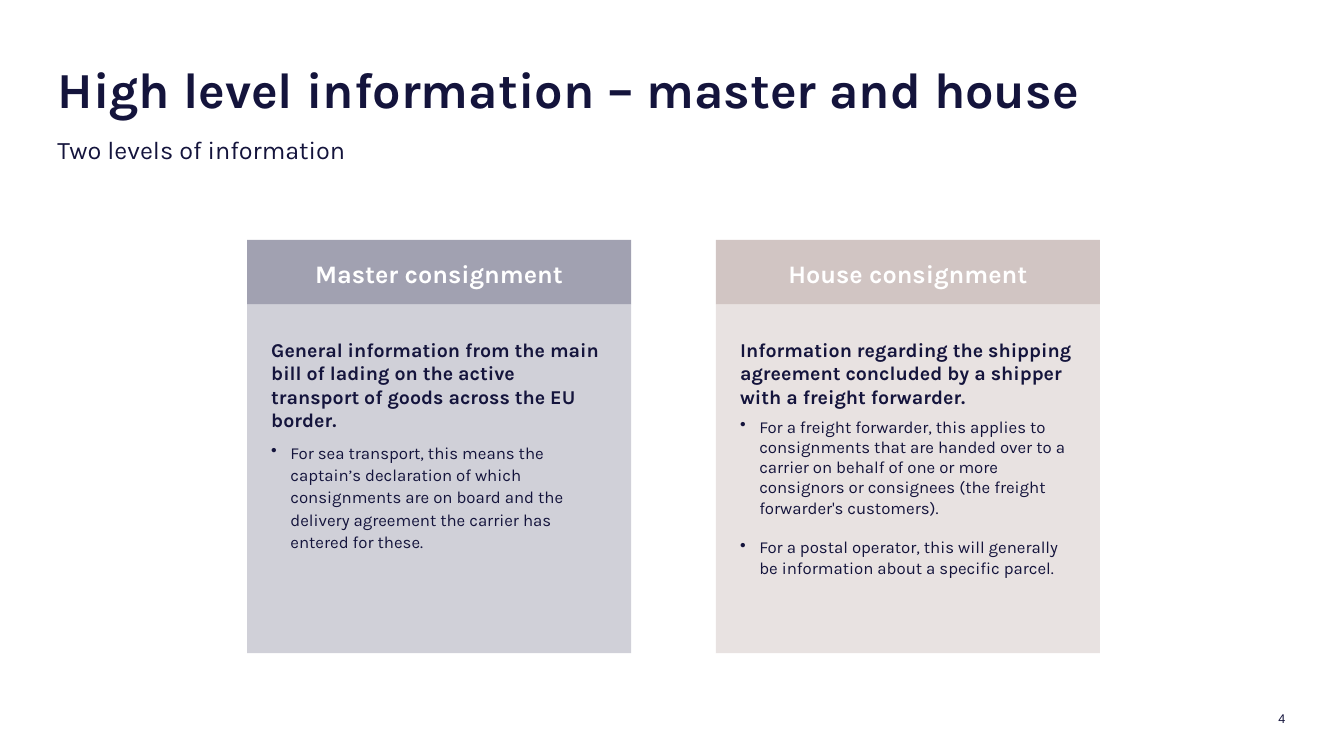
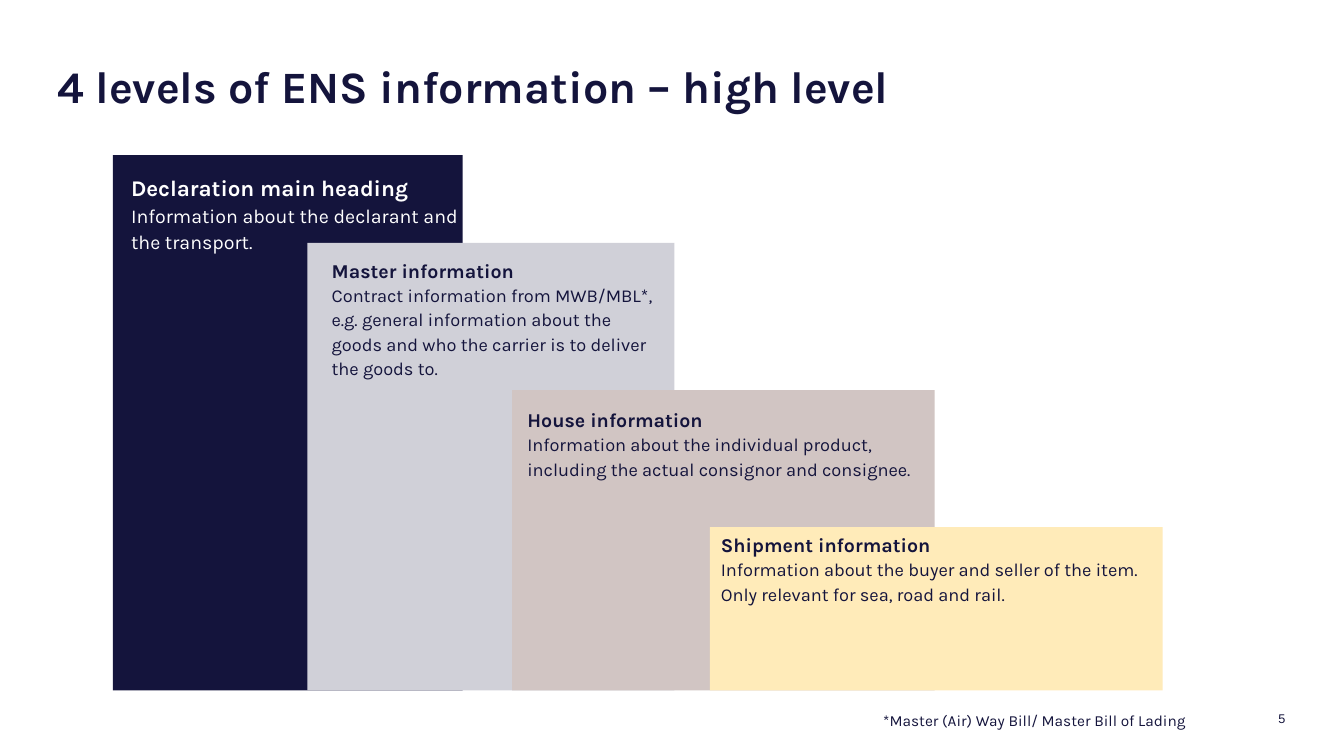
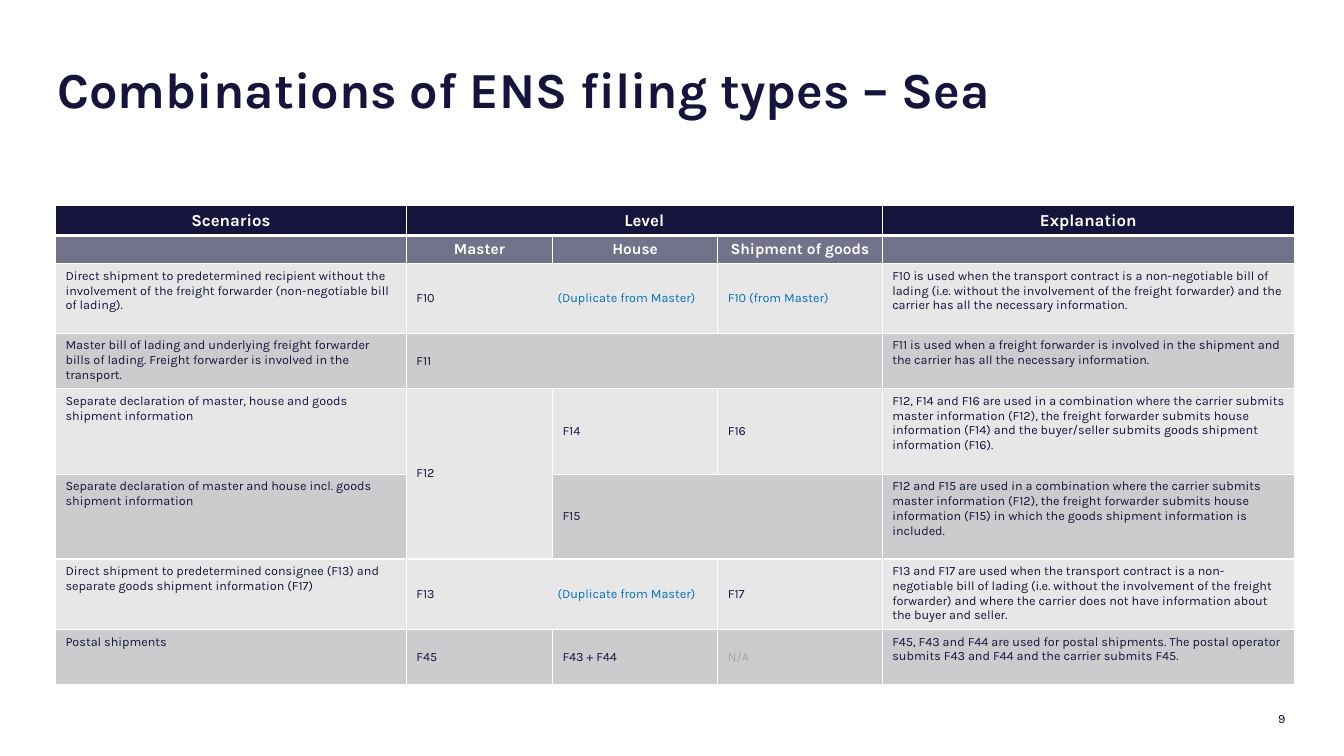
"""Builds three slides about levels and filing types of ENS information."""
from lxml import etree
from pptx import Presentation
from pptx.dml.color import RGBColor
from pptx.enum.shapes import MSO_SHAPE
from pptx.enum.text import MSO_ANCHOR, MSO_AUTO_SIZE, PP_ALIGN
from pptx.oxml.ns import qn
from pptx.util import Inches, Pt

RECTANGLE = MSO_SHAPE.RECTANGLE
TOP, MIDDLE, BOTTOM = MSO_ANCHOR.TOP, MSO_ANCHOR.MIDDLE, MSO_ANCHOR.BOTTOM
LEFT, CENTER, RIGHT = PP_ALIGN.LEFT, PP_ALIGN.CENTER, PP_ALIGN.RIGHT
NO_AUTO_SIZE = MSO_AUTO_SIZE.NONE

NAVY = RGBColor(0x14, 0x14, 0x3C)
WHITE = RGBColor(0xFF, 0xFF, 0xFF)
SLATE = RGBColor(0x72, 0x72, 0x8A)
LAVENDER = RGBColor(0xA1, 0xA1, 0xB1)
PALE_LAVENDER = RGBColor(0xD0, 0xD0, 0xD8)
ROSE = RGBColor(0xD1, 0xC5, 0xC3)
PALE_ROSE = RGBColor(0xE8, 0xE2, 0xE1)
YELLOW = RGBColor(0xFF, 0xEB, 0xB9)
LIGHT_GREY = RGBColor(0xE7, 0xE7, 0xE8)
MID_GREY = RGBColor(0xCC, 0xCC, 0xCE)
FADED = RGBColor(0xA6, 0xA6, 0xA6)
BLUE = RGBColor(0x00, 0x70, 0xC0)

FONT = "Karla"
NUMBER_FONT = "Arial"
LOOSE = 1.11
TITLE_ONLY, TITLE_AND_BODY = 5, 1

CONSIGNMENTS = [
    {
        "left": 2.45, "band": LAVENDER, "panel": PALE_LAVENDER,
        "heading": "Master consignment",
        "lead": "General information from the main bill of lading on the active transport "
                "of goods across the EU border.",
        "spacing": LOOSE,
        "bullets": [
            "For sea transport, this means the captain’s declaration of which consignments are "
            "on board and the delivery agreement the carrier has entered for these.",
        ],
    },
    {
        "left": 7.1, "band": ROSE, "panel": PALE_ROSE,
        "heading": "House consignment",
        "lead": "Information regarding the shipping agreement concluded by a shipper with a "
                "freight forwarder.",
        "spacing": 1.0,
        "bullets": [
            "For a freight forwarder, this applies to consignments that are handed over to a "
            "carrier on behalf of one or more consignors or consignees (the freight "
            "forwarder's customers).",
            "For a postal operator, this will generally be information about a specific parcel.",
        ],
    },
]

LEVELS_BOTTOM = 6.85
LEVELS = [
    {"left": 1.12, "top": 1.54, "width": 3.47, "insets": (0.18, 0.16, 0.04, 0),
     "fill": NAVY, "color": WHITE, "sizes": (16, 14), "heading": "Declaration main heading",
     "lines": ["Information about the declarant and the transport."]},
    {"left": 3.05, "top": 2.41, "width": 3.64, "insets": (0.24, 0.13, 0.15, 0),
     "fill": PALE_LAVENDER, "color": NAVY, "sizes": (14, 13), "heading": "Master information",
     "lines": ["Contract information from MWB/MBL*, e.g. general information about the goods "
               "and who the carrier is to deliver the goods to."]},
    {"left": 5.08, "top": 3.87, "width": 4.19, "insets": (0.15, 0.15, 0.05, 0),
     "fill": ROSE, "color": NAVY, "sizes": (14, 13), "heading": "House information",
     "lines": ["Information about the individual product, including the actual consignor and "
               "consignee."]},
    {"left": 7.04, "top": 5.23, "width": 4.49, "insets": (0.11, 0.03, 0.15, 0),
     "fill": YELLOW, "color": NAVY, "sizes": (14, 13), "heading": "Shipment information",
     "lines": ["Information about the buyer and seller of the item.",
               "Only relevant for sea, road and rail."]},
]
FOOTNOTE = "*Master (Air) Way Bill/ Master Bill of Lading"

DUPLICATE = "(Duplicate from Master)"
FROM_MASTER = "F10 (from Master)"
NOT_APPLICABLE = "N/A"
TEXT_COLORS = {DUPLICATE: BLUE, FROM_MASTER: BLUE, NOT_APPLICABLE: FADED}
COLUMN_WIDTHS = [3.48, 1.45, 1.64, 1.63, 4.09]
ROW_HEIGHTS = [0.28, 0.28, 0.69, 0.55, 0.85, 0.84, 0.7, 0.55]
MERGES = [((0, 1), (0, 3)), ((2, 1), (2, 2)), ((3, 1), (3, 3)),
          ((4, 1), (5, 1)), ((5, 2), (5, 3)), ((6, 1), (6, 2))]
FILINGS = [
    ["Scenarios", "Level", "", "", "Explanation"],
    ["", "Master", "House", "Shipment of goods", ""],
    ["Direct shipment to predetermined recipient without the involvement of the freight "
     "forwarder (non-negotiable bill of lading).",
     ("F10", DUPLICATE), "", FROM_MASTER,
     "F10 is used when the transport contract is a non-negotiable bill of lading (i.e. without "
     "the involvement of the freight forwarder) and the carrier has all the necessary "
     "information."],
    ["Master bill of lading and underlying freight forwarder bills of lading. Freight forwarder "
     "is involved in the transport.",
     "F11", "", "",
     "F11 is used when a freight forwarder is involved in the shipment and the carrier has all "
     "the necessary information."],
    ["Separate declaration of master, house and goods shipment information",
     "F12", "F14", "F16",
     "F12, F14 and F16 are used in a combination where the carrier submits master information "
     "(F12), the freight forwarder submits house information (F14) and the buyer/seller "
     "submits goods shipment information (F16)."],
    ["Separate declaration of master and house incl. goods shipment information",
     "", "F15", "",
     "F12 and F15 are used in a combination where the carrier submits master information "
     "(F12), the freight forwarder submits house information (F15) in which the goods "
     "shipment information is included."],
    ["Direct shipment to predetermined consignee (F13) and separate goods shipment information "
     "(F17)",
     ("F13", DUPLICATE), "", "F17",
     "F13 and F17 are used when the transport contract is a non-negotiable bill of lading (i.e. "
     "without the involvement of the freight forwarder) and where the carrier does not have "
     "information about the buyer and seller."],
    ["Postal shipments", "F45", "F43 + F44", NOT_APPLICABLE,
     "F45, F43 and F44 are used for postal shipments. The postal operator submits F43 and F44 "
     "and the carrier submits F45."],
]


def add_run(paragraph, text, size, color=NAVY, bold=False, font=FONT):
    run = paragraph.add_run()
    run.text = text
    run.font.name = font
    run.font.size = Pt(size)
    run.font.bold = bold
    run.font.color.rgb = color


def write(frame, text, size, color=NAVY, bold=False, font=FONT,
          align=LEFT, spacing=1.0, after=0):
    """Write into the empty first paragraph, or else into a new one."""
    first = frame.paragraphs[0]
    paragraph = frame.add_paragraph() if first.runs else first
    paragraph.alignment = align
    paragraph.line_spacing = spacing
    paragraph.space_before = Pt(0)
    paragraph.space_after = Pt(after)
    add_run(paragraph, text, size, color, bold, font)
    return paragraph


def set_frame(shape, insets=(0, 0, 0, 0), anchor=TOP):
    frame = shape.text_frame
    frame.word_wrap = True
    frame.auto_size = NO_AUTO_SIZE
    frame.vertical_anchor = anchor
    (frame.margin_left, frame.margin_top,
     frame.margin_right, frame.margin_bottom) = map(Inches, insets)
    return frame


def place(shape, left, top, width, height):
    shape.left, shape.top = Inches(left), Inches(top)
    shape.width, shape.height = Inches(width), Inches(height)


def add_textbox(slide, box, **frame_options):
    return set_frame(slide.shapes.add_textbox(*map(Inches, box)), **frame_options)


def add_rectangle(slide, box, fill, **frame_options):
    shape = slide.shapes.add_shape(RECTANGLE, *map(Inches, box))
    shape.shadow.inherit = False
    shape.fill.solid()
    shape.fill.fore_color.rgb = fill
    shape.line.fill.background()
    return set_frame(shape, **frame_options)


def set_bullet(paragraph, character=None):
    properties = paragraph._p.get_or_add_pPr()
    if character:
        properties.set("marL", str(Inches(0.19)))
        properties.set("indent", str(-Inches(0.19)))
        etree.SubElement(properties, qn("a:buChar"), char=character)
    else:
        properties.set("marL", "0")
        properties.set("indent", "0")
        etree.SubElement(properties, qn("a:buNone"))


def start_slide(presentation, layout, title, number, title_size=36, number_font=NUMBER_FONT):
    slide = presentation.slides.add_slide(presentation.slide_layouts[layout])
    place(slide.shapes.title, 0.57, 0.65, 12.2, 0.57)
    write(set_frame(slide.shapes.title), title, title_size, bold=True, spacing=0.89)
    number_frame = add_textbox(slide, (11.05, 7.02, 1.7, 0.18), anchor=BOTTOM)
    write(number_frame, number, 9, font=number_font, align=RIGHT)
    return slide


def build_consignments(presentation):
    slide = start_slide(presentation, TITLE_AND_BODY,
                        "High level information – master and house", "4")
    body = slide.placeholders[1]
    place(body, 0.57, 1.3, 12.2, 0.41)
    set_bullet(write(set_frame(body), "Two levels of information", 18, spacing=LOOSE))
    width, band_top, panel_top = 3.81, 2.38, 3.02
    for item in CONSIGNMENTS:
        left = item["left"]
        panel = add_rectangle(slide, (left, panel_top, width, 3.46), item["panel"],
                              insets=(0.24, 0.33, 0.24, 0.12))
        write(panel, item["lead"], 14, bold=True, after=6)
        for bullet in item["bullets"]:
            set_bullet(write(panel, bullet, 12, spacing=item["spacing"], after=14), "•")
        band = add_rectangle(slide, (left, band_top, width, panel_top - band_top),
                             item["band"], anchor=MIDDLE)
        write(band, item["heading"], 18, WHITE, True, align=CENTER, spacing=LOOSE)


def build_levels(presentation):
    slide = start_slide(presentation, TITLE_ONLY,
                        "4 levels of ENS information – high level", "5", title_size=32)
    for level in LEVELS:
        box = (level["left"], level["top"], level["width"], LEVELS_BOTTOM - level["top"])
        frame = add_rectangle(slide, box, level["fill"], insets=level["insets"])
        heading_size, line_size = level["sizes"]
        write(frame, level["heading"], heading_size, level["color"], True, spacing=LOOSE)
        for line in level["lines"]:
            write(frame, line, line_size, level["color"], spacing=LOOSE)
    write(add_textbox(slide, (8.76, 7.03, 3.22, 0.19)), FOOTNOTE, 11, spacing=LOOSE)


def set_borders(cell, row):
    properties = cell._tc.get_or_add_tcPr()
    thick = {(0, "lnB"), (1, "lnT")}
    for side in ("lnL", "lnR", "lnT", "lnB"):
        width = Pt(3 if (row, side) in thick else 1)
        line = etree.SubElement(properties, qn(f"a:{side}"), w=str(width))
        fill = etree.SubElement(line, qn("a:solidFill"))
        etree.SubElement(fill, qn("a:srgbClr"), val=str(WHITE))


def fill_cell(cell, row, column, content):
    set_borders(cell, row)
    cell.fill.solid()
    body_fill = MID_GREY if row % 2 else LIGHT_GREY
    cell.fill.fore_color.rgb = {0: NAVY, 1: SLATE}.get(row, body_fill)
    cell.margin_top = cell.margin_bottom = Inches(0.05)
    header = row < 2
    cell.vertical_anchor = MIDDLE if row == 0 or (not header and 0 < column < 4) else TOP
    size = {0: 12, 1: 11}.get(row, 9)
    if not content:
        etree.SubElement(cell.text_frame.paragraphs[0]._p, qn("a:endParaRPr"), sz="900")
        return
    parts = content if isinstance(content, tuple) else (content,)
    color = WHITE if header else TEXT_COLORS.get(parts[0], NAVY)
    paragraph = write(cell.text_frame, parts[0], size, color, header,
                      align=CENTER if header else LEFT)
    if len(parts) > 1:
        tabs = etree.SubElement(paragraph._p.get_or_add_pPr(), qn("a:tabLst"))
        etree.SubElement(tabs, qn("a:tab"), pos=str(Inches(1.4)), algn="l")
        add_run(paragraph, "\t" + parts[1], size, TEXT_COLORS[parts[1]])


def build_filings(presentation):
    slide = start_slide(presentation, TITLE_ONLY,
                        "Combinations of ENS filing types – Sea", "9", number_font=FONT)
    frame = slide.shapes.add_table(
        len(ROW_HEIGHTS), len(COLUMN_WIDTHS), Inches(0.55), Inches(2.04),
        Inches(sum(COLUMN_WIDTHS)), Inches(sum(ROW_HEIGHTS)))
    table = frame.table
    for column, width in zip(table.columns, COLUMN_WIDTHS):
        column.width = Inches(width)
    for row, height in zip(table.rows, ROW_HEIGHTS):
        row.height = Inches(height)
    for row, contents in enumerate(FILINGS):
        for column, content in enumerate(contents):
            fill_cell(table.cell(row, column), row, column, content)
    for start, end in MERGES:
        table.cell(*start).merge(table.cell(*end))


def main():
    presentation = Presentation()
    presentation.slide_width = Inches(13.33)
    presentation.slide_height = Inches(7.5)
    build_consignments(presentation)
    build_levels(presentation)
    build_filings(presentation)
    presentation.save("out.pptx")


if __name__ == "__main__":
    main()
